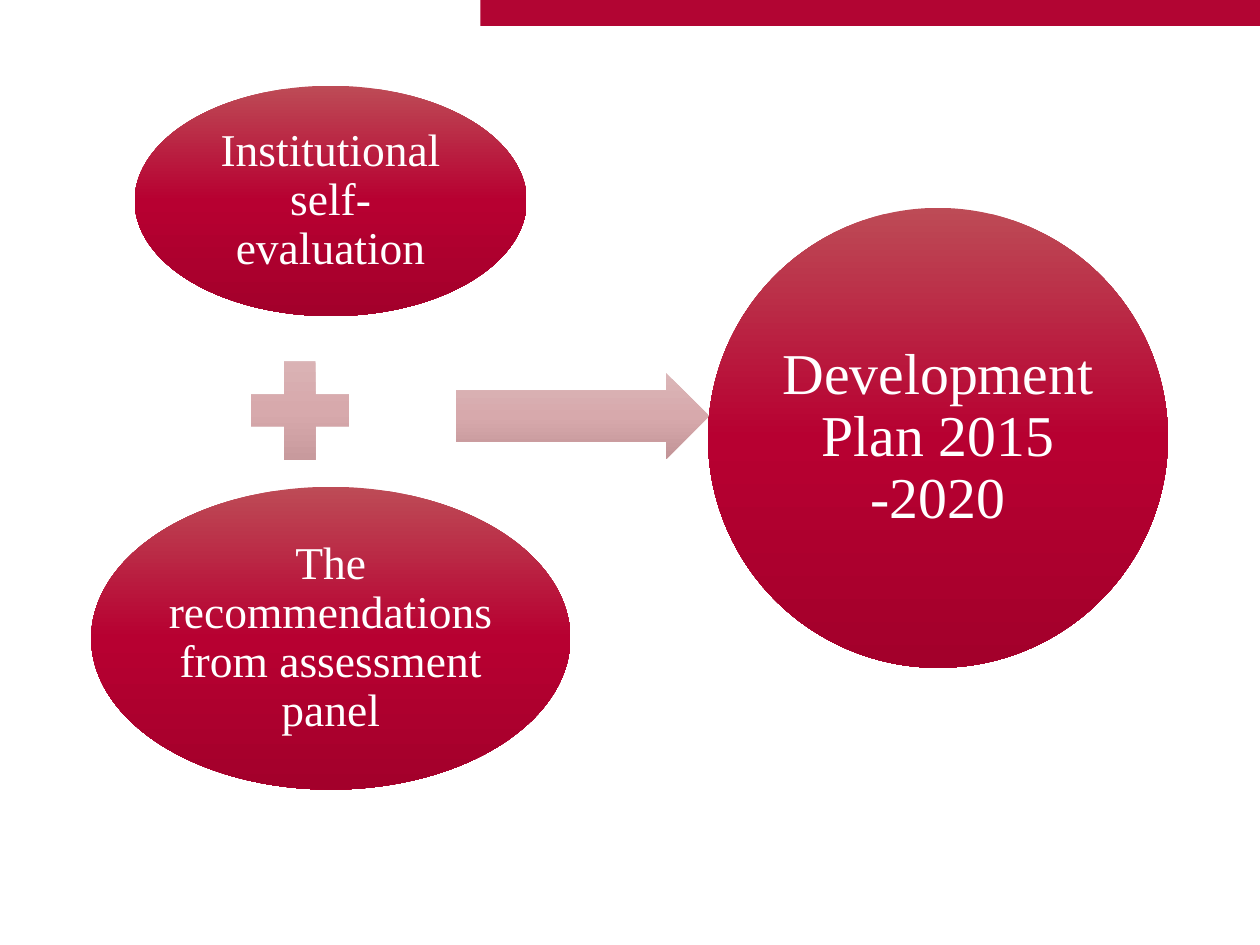
"""Build a slide showing two inputs that lead to a development plan."""
from copy import deepcopy

from pptx import Presentation
from pptx.dml.color import RGBColor
from pptx.enum import shapes, text
from pptx.util import Pt

FORM = shapes.MSO_SHAPE
FONT = "Times New Roman"
BAR_COLOR, TEXT_COLOR = "B20533", "FFFFFF"
STRONG = ("BD4B56", "B70031", "A3002B")
PALE = ("DBB6B8", "D7A9AC", "C29497")

BAR = (274.5, 0, 446, 14.9)
OVALS = [
    ("Institutional self-evaluation", 26, 3, (77, 49, 224, 131.6)),
    ("The recommendations from assessment panel", 26, 3, (52.1, 278.2, 273.8, 173)),
    ("Development Plan 2015 -2020", 33, 3.6, (404.6, 118.8, 262.8, 262.8)),
]
SIGNS = [
    (FORM.MATH_PLUS, (), (133.2, 196.4, 76.3, 76.3)),
    (FORM.RIGHT_ARROW, (0.6, 0.5), (260.6, 213.2, 144.6, 49)),
]


def color(value):
    return RGBColor.from_string(value)


def set_all(target, values):
    for name, value in values.items():
        setattr(target, name, value)


def add_plain(slide, form, box):
    shape = slide.shapes.add_shape(form, *(Pt(length) for length in box))
    shape.shadow.inherit = False
    shape.line.fill.background()
    return shape


def fill_gradient(shape, colors):
    shape.fill.gradient()
    shape.fill.gradient_angle = 270
    stop_list = shape._element.xpath("./p:spPr/a:gradFill/a:gsLst")[0]
    stop_list.append(deepcopy(stop_list[0]))
    for index, (stop, value) in enumerate(zip(shape.fill.gradient_stops, colors)):
        stop.position = index / (len(colors) - 1)
        stop.color.rgb = color(value)


def add_oval(slide, words, size, margin, box):
    shape = add_plain(slide, FORM.OVAL, box)
    fill_gradient(shape, STRONG)
    frame = shape.text_frame
    set_all(frame, {"word_wrap": True, "vertical_anchor": text.MSO_ANCHOR.MIDDLE})
    set_all(frame, {f"margin_{side}": Pt(margin) for side in ("left", "top", "right", "bottom")})
    paragraph = frame.paragraphs[0]
    set_all(paragraph, {"text": words, "alignment": text.PP_ALIGN.CENTER, "line_spacing": 0.9})
    font = paragraph.runs[0].font
    set_all(font, {"name": FONT, "size": Pt(size)})
    font.color.rgb = color(TEXT_COLOR)


def main():
    presentation = Presentation()
    set_all(presentation, {"slide_width": Pt(720), "slide_height": Pt(540)})
    slide = presentation.slides.add_slide(presentation.slide_layouts[6])

    bar = add_plain(slide, FORM.RECTANGLE, BAR)
    bar.fill.solid()
    bar.fill.fore_color.rgb = color(BAR_COLOR)

    for form, adjustments, box in SIGNS:
        sign = add_plain(slide, form, box)
        fill_gradient(sign, PALE)
        for index, value in enumerate(adjustments):
            sign.adjustments[index] = value
    for oval in OVALS:
        add_oval(slide, *oval)

    presentation.save("out.pptx")


if __name__ == "__main__":
    main()
